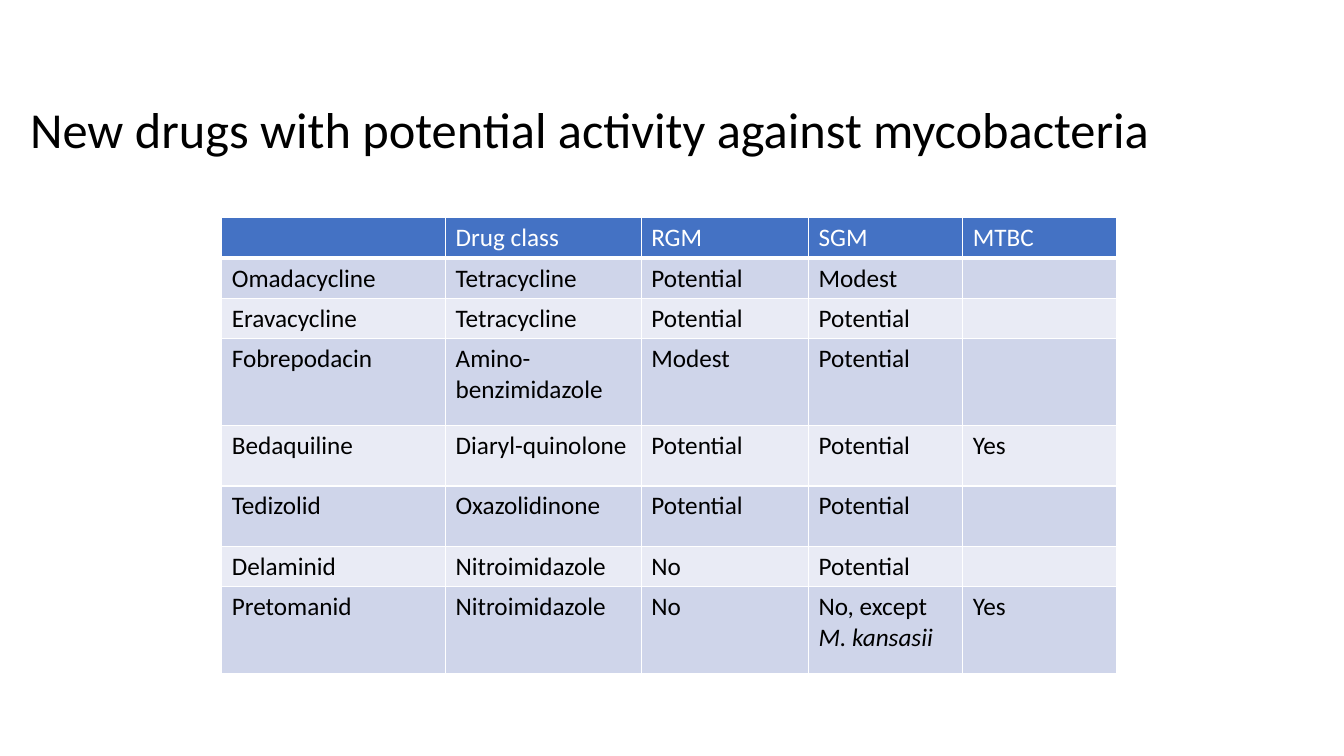
"""Build a slide with a table of new drugs active against mycobacteria."""
import lxml.etree
import pptx
import pptx.dml.color
import pptx.enum.text
import pptx.oxml.ns
import pptx.util

Inches = pptx.util.Inches
Pt = pptx.util.Pt
qn = pptx.oxml.ns.qn

COLOURS = {
    "text": "000000",
    "header": "4472C4",
    "header_text": "FFFFFF",
    "odd_row": "CFD5EA",
    "even_row": "E9EBF5",
    "border": "FFFFFF",
}
COLUMN_WIDTHS = [2.22, 1.94, 1.66, 1.53, 1.53]
ROW_HEIGHTS = [0.35, 0.35, 0.35, 0.86, 0.6, 0.6, 0.35, 0.86]
SPECIES = "M. kansasii"
DRUGS = [
    ["", "Drug class", "RGM", "SGM", "MTBC"],
    ["Omadacycline", "Tetracycline", "Potential", "Modest", ""],
    ["Eravacycline", "Tetracycline", "Potential", "Potential", ""],
    ["Fobrepodacin", "Amino-benzimidazole", "Modest", "Potential", ""],
    ["Bedaquiline", "Diaryl-quinolone", "Potential", "Potential", "Yes"],
    ["Tedizolid", "Oxazolidinone", "Potential", "Potential", ""],
    ["Delaminid", "Nitroimidazole", "No", "Potential", ""],
    ["Pretomanid", "Nitroimidazole", "No", ["No, except ", SPECIES], "Yes"],
]


def add_run(paragraph, text, size, colour):
    run = paragraph.add_run()
    run.text = text
    run.font.name = "Calibri"
    run.font.size = Pt(size)
    run.font.color.rgb = pptx.dml.color.RGBColor.from_string(COLOURS[colour])
    return run


def add_border(cell, side, width):
    line = lxml.etree.SubElement(cell._tc.get_or_add_tcPr(), qn(f"a:ln{side}"), w=str(Pt(width)))
    fill = lxml.etree.SubElement(line, qn("a:solidFill"))
    lxml.etree.SubElement(fill, qn("a:srgbClr"), val=COLOURS["border"])


presentation = pptx.Presentation()
presentation.slide_width = Inches(13.33)
presentation.slide_height = Inches(7.5)
slide = presentation.slides.add_slide(presentation.slide_layouts[6])

title = slide.shapes.add_textbox(Inches(0.2), Inches(0.99), Inches(11.95), Inches(0.98)).text_frame
title.word_wrap = True
title.vertical_anchor = pptx.enum.text.MSO_ANCHOR.TOP
title.paragraphs[0].line_spacing = 0.9
add_run(title.paragraphs[0], "New drugs with potential activity against mycobacteria", 36, "text")

drug_table = slide.shapes.add_table(
    len(ROW_HEIGHTS), len(COLUMN_WIDTHS), Inches(2.2), Inches(2.16), Inches(8.88), Inches(4.52)
).table
drug_table.first_row = False
drug_table.horz_banding = False
for column, width in zip(drug_table.columns, COLUMN_WIDTHS):
    column.width = Inches(width)
for row, height in zip(drug_table.rows, ROW_HEIGHTS):
    row.height = Inches(height)

for row_index, entries in enumerate(DRUGS):
    is_header = row_index == 0
    row_fill = "header" if is_header else "odd_row" if row_index % 2 else "even_row"
    for column_index, entry in enumerate(entries):
        cell = drug_table.cell(row_index, column_index)
        for side in "LRTB":
            add_border(cell, side, 3 if is_header and side == "B" else 1)
        cell.fill.solid()
        cell.fill.fore_color.rgb = pptx.dml.color.RGBColor.from_string(COLOURS[row_fill])
        pieces = entry if isinstance(entry, list) else [entry]
        for piece in filter(None, pieces):
            run = add_run(
                cell.text_frame.paragraphs[0], piece, 18, "header_text" if is_header else "text"
            )
            if piece == SPECIES:
                run.font.italic = True

presentation.save("out.pptx")
